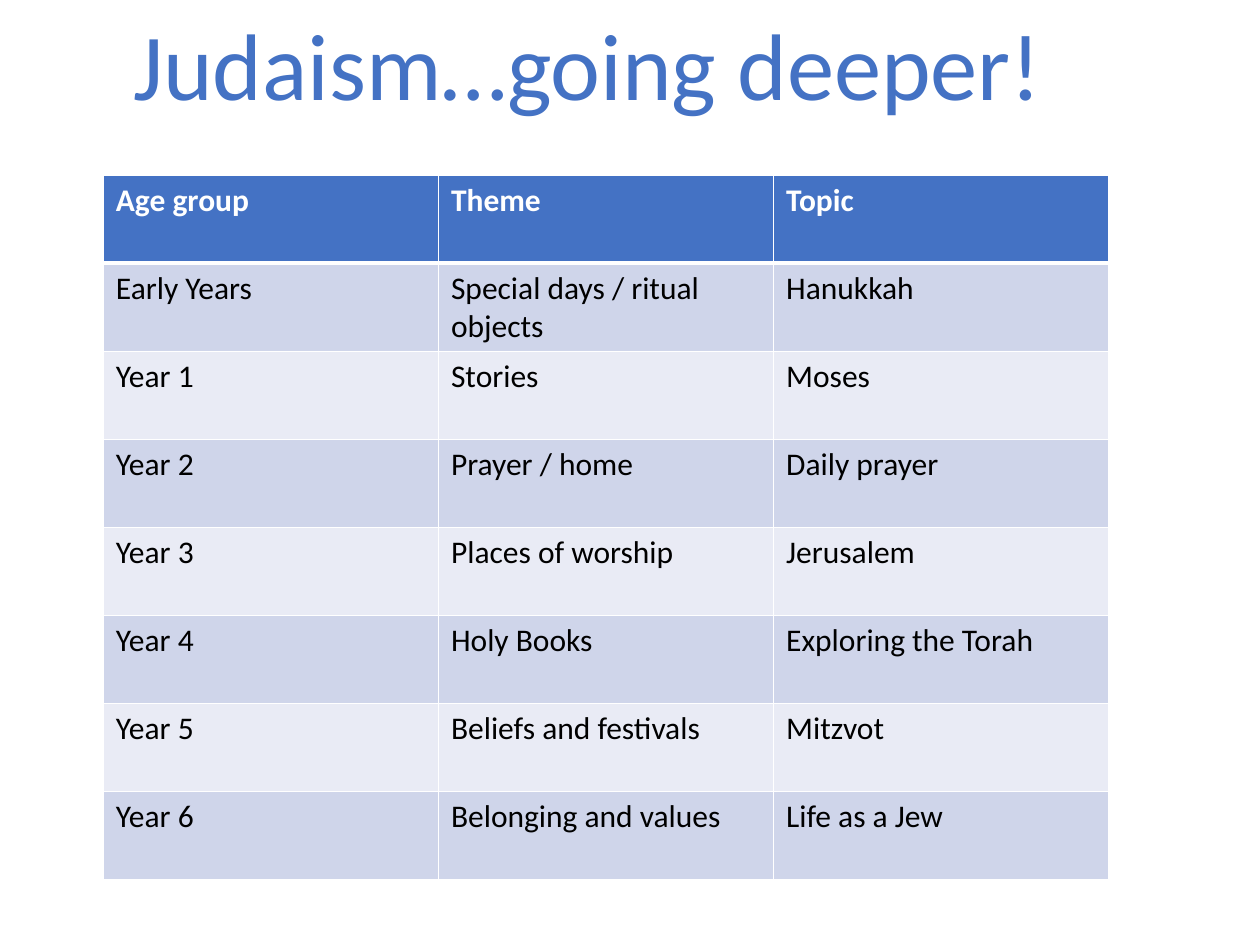
from lxml.etree import SubElement
from pptx import Presentation
from pptx.dml.color import RGBColor
from pptx.enum.text import MSO_ANCHOR, MSO_AUTO_SIZE, PP_ALIGN
from pptx.oxml.ns import qn
from pptx.util import Inches, Pt

FONT = "Calibri"
COLOURS = {
    "accent": "4472C4",
    "odd_row": "CFD5EA",
    "even_row": "E9EBF5",
    "white": "FFFFFF",
    "black": "000000",
}
CURRICULUM = [
    ("Age group", "Theme", "Topic"),
    ("Early Years", "Special days / ritual objects", "Hanukkah"),
    ("Year 1", "Stories", "Moses"),
    ("Year 2", "Prayer / home", "Daily prayer"),
    ("Year 3", "Places of worship", "Jerusalem"),
    ("Year 4", "Holy Books", "Exploring the Torah"),
    ("Year 5", "Beliefs and festivals", "Mitzvot"),
    ("Year 6", "Belonging and values", "Life as a Jew"),
]


def colour(name):
    return RGBColor.from_string(COLOURS[name])


def format_font(paragraph, size, colour_name, bold=False):
    for run in paragraph.runs:
        run.font.name = FONT
        run.font.size = Pt(size)
        run.font.bold = bold
        run.font.color.rgb = colour(colour_name)


def add_borders(cell, top, bottom):
    """Draw white cell borders; must run before the cell is filled."""
    properties = cell._tc.get_or_add_tcPr()
    for side, width in (("L", 1), ("R", 1), ("T", top), ("B", bottom)):
        line = SubElement(properties, qn(f"a:ln{side}"), w=str(Pt(width)))
        fill = SubElement(line, qn("a:solidFill"))
        SubElement(fill, qn("a:srgbClr"), val=COLOURS["white"])


def place_title(slide, left, top, width, height):
    title = slide.shapes.title
    title.left, title.top, title.width, title.height = left, top, width, height
    text_frame = title.text_frame
    text_frame.text = "Judaism…going deeper!"
    text_frame.word_wrap = False
    text_frame.auto_size = MSO_AUTO_SIZE.SHAPE_TO_FIT_TEXT
    text_frame.vertical_anchor = MSO_ANCHOR.TOP
    paragraph = text_frame.paragraphs[0]
    paragraph.alignment = PP_ALIGN.CENTER
    format_font(paragraph, 54, "accent")


def place_table(slide, left, top, width, height):
    table = slide.shapes.add_table(
        len(CURRICULUM), len(CURRICULUM[0]), left, top, width, height
    ).table
    for row_index, texts in enumerate(CURRICULUM):
        header = row_index == 0
        row_fill = "accent" if header else "odd_row" if row_index % 2 else "even_row"
        for column_index, text in enumerate(texts):
            cell = table.cell(row_index, column_index)
            add_borders(cell, top=3 if row_index == 1 else 1, bottom=3 if header else 1)
            cell.fill.solid()
            cell.fill.fore_color.rgb = colour(row_fill)
            cell.text_frame.text = text
            format_font(
                cell.text_frame.paragraphs[0], 18, "white" if header else "black", header
            )


def main():
    presentation = Presentation()
    presentation.slide_width = Inches(10)
    presentation.slide_height = Inches(7.5)
    slide = presentation.slides.add_slide(presentation.slide_layouts[5])

    # Heading
    place_title(slide, Inches(0.92), Inches(0), Inches(7.49), Inches(1.01))
    # Topics by age group
    place_table(slide, Inches(0.82), Inches(1.39), Inches(7.98), Inches(5.59))

    presentation.save("out.pptx")


if __name__ == "__main__":
    main()
